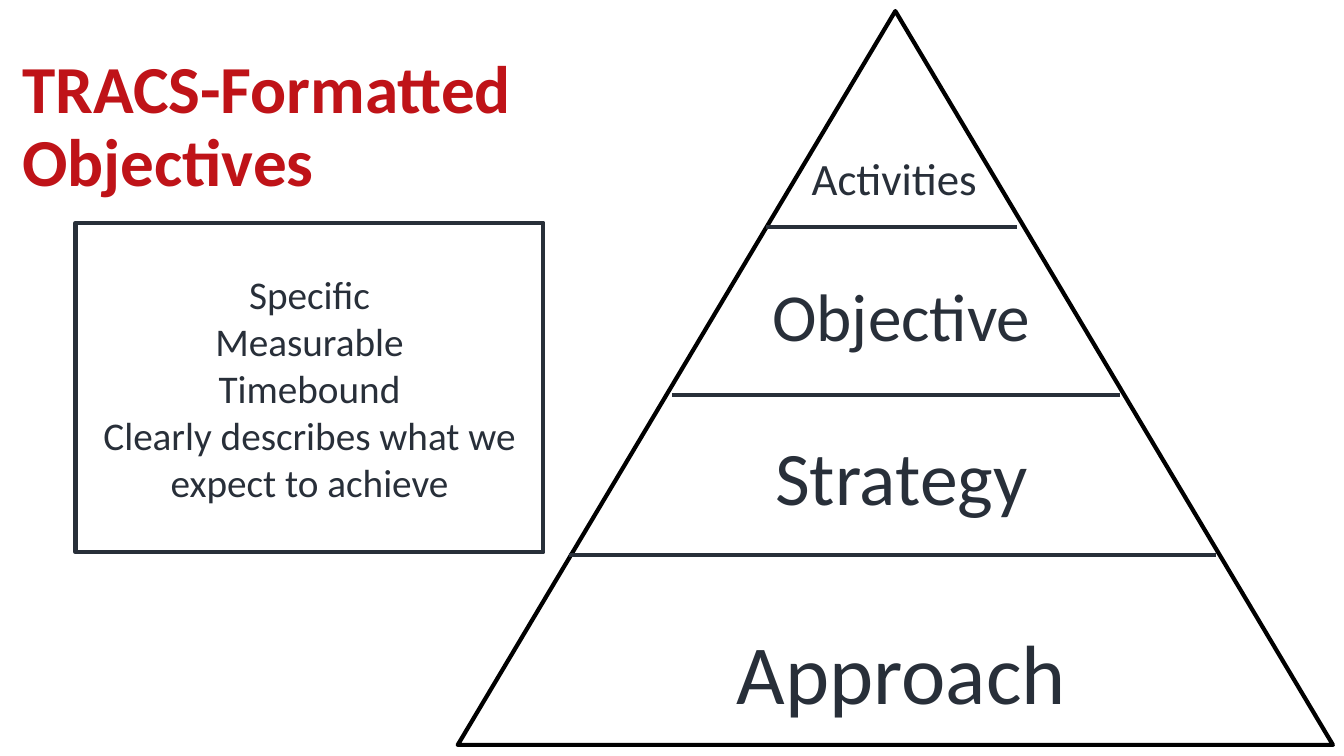
import dataclasses
import typing

import pptx
import pptx.dml.color
import pptx.enum.shapes
import pptx.enum.text
import pptx.oxml.ns
import pptx.util

PX = 9144  # EMU per px, 100 px to the inch
INK = {"red": "BF1318", "dark": "282F39", "black": "000000"}
SHAPES = pptx.enum.shapes.MSO_SHAPE
ALIGN = pptx.enum.text.PP_ALIGN
MID = pptx.enum.text.MSO_ANCHOR.MIDDLE
FIXED = pptx.enum.text.MSO_AUTO_SIZE.NONE


@dataclasses.dataclass
class Box:
    left: int
    top: int
    width: int
    height: int

    def emu(self) -> list[int]:
        return [side * PX for side in dataclasses.astuple(self)]


@dataclasses.dataclass
class Tier:
    text: str
    size: int
    box: Box


@dataclasses.dataclass
class Rule:
    left: int
    right: int
    y: int


TITLE = Box(12, 55, 779, 145)
PEAK = Box(454, 11, 868, 728)
NOTE = Box(75, 221, 464, 327)
TIERS = [
    Tier("Approach", 60, Box(573, 621, 642, 89)),
    Tier("Strategy", 54, Box(573, 427, 642, 89)),
    Tier("Objective", 48, Box(573, 268, 642, 89)),
    Tier("Activities", 32, Box(566, 132, 642, 89)),
]
RULES = [Rule(564, 1206, 551), Rule(760, 1009, 225), Rule(667, 1111, 392)]
TRAITS = [
    "Specific",
    "Measurable",
    "Timebound",
    "Clearly describes what we expect to achieve",
]


def tint(name: str) -> pptx.dml.color.RGBColor:
    return pptx.dml.color.RGBColor.from_string(INK[name])


def apply(item: typing.Any, form: dict[str, typing.Any]) -> None:
    """Set each attribute named in form on item."""
    for key, value in form.items():
        setattr(item, key, value)


def write(shape: typing.Any, lines: list[str], size: int, ink: str = "dark",
          bold: bool = False, **form: typing.Any) -> None:
    """Fill a shape with one paragraph per line; form formats each paragraph."""
    frame = shape.text_frame
    frame.text = "\n".join(lines)
    apply(frame, {"word_wrap": True, "vertical_anchor": MID, "auto_size": FIXED})
    for para in frame.paragraphs:
        apply(para, {"alignment": ALIGN.CENTER} | form)
        for run in para.runs:
            apply(run.font, {"name": "Calibri", "size": pptx.util.Pt(size), "bold": bold})
            run.font.color.rgb = tint(ink)


def stroke(shape: typing.Any, ink: str) -> None:
    shape.line.color.rgb = tint(ink)
    shape.line.width = pptx.util.Pt(3)


def frame(slide: typing.Any, kind: SHAPES, box: Box, ink: str) -> typing.Any:
    """Add an unfilled, outlined shape."""
    shape = slide.shapes.add_shape(kind, *box.emu())
    shape.shadow.inherit = False
    shape.fill.background()
    stroke(shape, ink)
    return shape


def divide(slide: typing.Any, rule: Rule) -> None:
    """Add a level line between two tiers."""
    line = slide.shapes.add_connector(
        pptx.enum.shapes.MSO_CONNECTOR.STRAIGHT,
        rule.left * PX, rule.y * PX, rule.right * PX, rule.y * PX)
    stroke(line, "dark")
    props = line.element.find(pptx.oxml.ns.qn("p:spPr"))
    props.append(pptx.oxml.parse_xml(
        f"<a:effectLst {pptx.oxml.ns.nsdecls('a')}/>"))


def main() -> None:
    deck = pptx.Presentation()
    apply(deck, {"slide_width": 1333 * PX, "slide_height": 750 * PX})
    slide = deck.slides.add_slide(deck.slide_layouts.get_by_name("Title Only"))

    title = slide.shapes.title
    apply(title, dict(zip(("left", "top", "width", "height"), TITLE.emu())))
    write(title, ["TRACS-Formatted Objectives"], 48, "red", True,
          alignment=ALIGN.LEFT, line_spacing=0.9)

    frame(slide, SHAPES.ISOSCELES_TRIANGLE, PEAK, "black")
    for rule in RULES:
        divide(slide, rule)
    for tier in TIERS:
        write(slide.shapes.add_textbox(*tier.box.emu()), [tier.text], tier.size)
    write(frame(slide, SHAPES.RECTANGLE, NOTE, "dark"), TRAITS, 28)

    deck.save("out.pptx")


if __name__ == "__main__":
    main()
